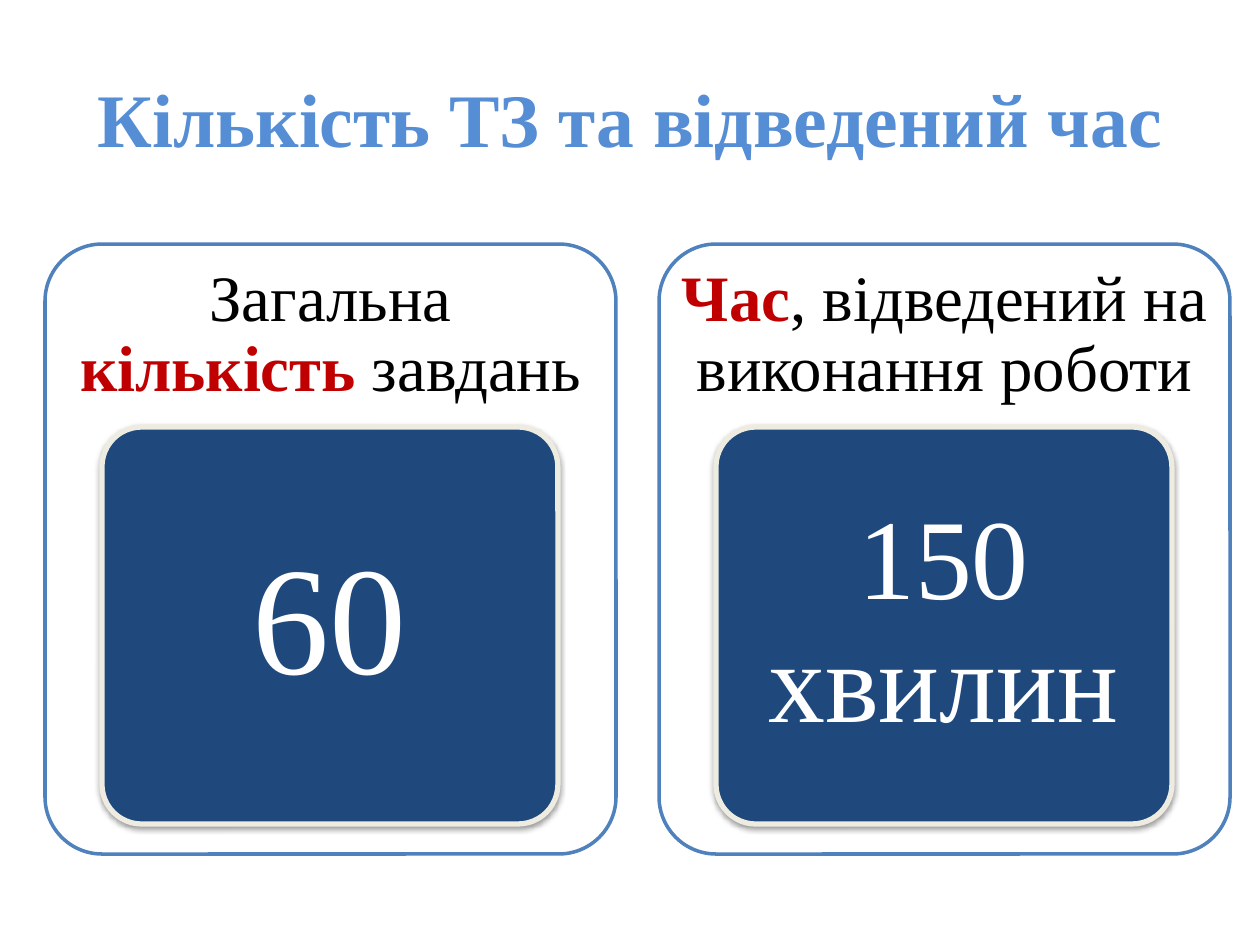
import dataclasses

import lxml.etree
import pptx
import pptx.dml.color
import pptx.enum.shapes
import pptx.enum.text
import pptx.oxml.ns
import pptx.util

PX = 914400 / 126  # EMU in one px


@dataclasses.dataclass(frozen=True)
class Theme:
    font: str = "Times New Roman"
    title: str = "558ED5"
    panel: str = "FFFFFF"
    outline: str = "4F81BD"
    tile: str = "1F497D"
    tile_edge: str = "EEECE1"
    text: str = "000000"
    accent: str = "C00000"
    light: str = "FFFFFF"
    title_size: float = 43.2
    caption_size: int = 37


THEME = Theme()

# Each card: caption spans (text, emphasised), value, value size, value insets
CARDS = [
    ([("Загальна ", False), ("кількість", True), (" завдань", False)],
     "60", 88, (30, 23)),
    ([("Час", True), (", відведений на виконання роботи", False)],
     "150 хвилин", 65, (23, 18)),
]
CARD_LEFT, CARD_TOP, CARD_STEP = 45, 244, 614


def px(length):
    return pptx.util.Emu(round(length * PX))


def color(value):
    return pptx.dml.color.RGBColor.from_string(value)


def apply(target, values):
    for name, value in values.items():
        setattr(target, name, value)


def place(shape, left, top, width, height):
    apply(shape, {"left": px(left), "top": px(top),
                  "width": px(width), "height": px(height)})


def add_spans(para, spans, size):
    """Fill a centred paragraph with (text, colour, bold) spans."""
    para.alignment = pptx.enum.text.PP_ALIGN.CENTER
    for text, shade, bold in spans:
        span = para.add_run()
        span.text = text
        apply(span.font, {"name": THEME.font, "size": pptx.util.Pt(size),
                          "bold": bold})
        span.font.color.rgb = color(shade)


def add_label(page, bounds, insets, spans, size):
    box = page.shapes.add_textbox(*map(px, bounds))
    side, end = map(px, insets)
    apply(box.text_frame, {
        "word_wrap": True,
        "vertical_anchor": pptx.enum.text.MSO_ANCHOR.MIDDLE,
        "margin_left": side, "margin_right": side,
        "margin_top": end, "margin_bottom": end,
    })
    para = box.text_frame.paragraphs[0]
    para.line_spacing = 0.9
    add_spans(para, spans, size)


def add_rounded(page, bounds, fill, edge, weight):
    shape = page.shapes.add_shape(
        pptx.enum.shapes.MSO_SHAPE.ROUNDED_RECTANGLE, *map(px, bounds))
    shape.adjustments[0] = 0.1
    shape.shadow.inherit = False
    shape.fill.solid()
    shape.fill.fore_color.rgb = color(fill)
    shape.line.color.rgb = color(edge)
    shape.line.width = pptx.util.Pt(weight)
    return shape


def add_shadow(shape):
    """Put a soft shadow straight below the shape."""
    qn = pptx.oxml.ns.qn
    effects = shape._element.spPr.find(qn("a:effectLst"))
    outer = lxml.etree.SubElement(effects, qn("a:outerShdw"), {
        "blurRad": str(pptx.util.Pt(3.1)), "dist": str(pptx.util.Pt(1.6)),
        "dir": "5400000", "rotWithShape": "0"})
    shade = lxml.etree.SubElement(outer, qn("a:srgbClr"), val="000000")
    lxml.etree.SubElement(shade, qn("a:alpha"), val="38000")


def add_title(page, text):
    title = page.shapes.title
    place(title, 63, 38, 1134, 158)
    title.text_frame.vertical_anchor = pptx.enum.text.MSO_ANCHOR.MIDDLE
    add_spans(title.text_frame.paragraphs[0],
              [(text, THEME.title, True)], THEME.title_size)


def add_card(page, left, caption, value, size, insets):
    # Outlined panel with its caption
    add_rounded(page, (left, CARD_TOP, 571, 610),
                THEME.panel, THEME.outline, 2)
    spans = [(text, THEME.accent if strong else THEME.text, strong)
             for text, strong in caption]
    add_label(page, (left, CARD_TOP, 571, 183), (19, 19),
              spans, THEME.caption_size)
    # Dark tile with the value
    tile = add_rounded(page, (left + 57, CARD_TOP + 183, 456, 397),
                       THEME.tile, THEME.tile_edge, 3)
    add_shadow(tile)
    add_label(page, (left + 68, CARD_TOP + 194, 433, 373), insets,
              [(value, THEME.light, False)], size)


def main():
    deck = pptx.Presentation()
    apply(deck, {"slide_width": px(1260), "slide_height": px(945)})
    page = deck.slides.add_slide(deck.slide_layouts[5])
    add_title(page, "Кількість ТЗ та відведений час")
    for index, card in enumerate(CARDS):
        add_card(page, CARD_LEFT + index * CARD_STEP, *card)
    deck.save("out.pptx")


if __name__ == "__main__":
    main()
